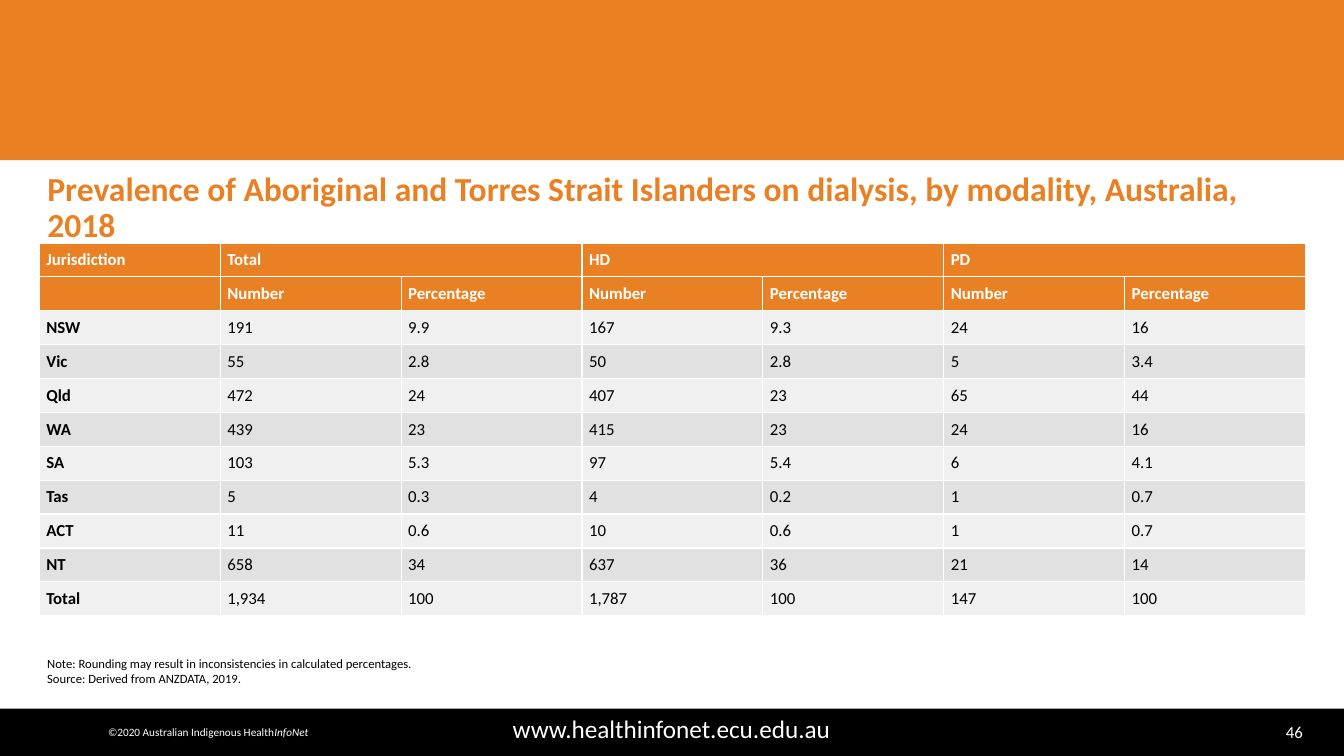
from pptx import Presentation
from pptx.dml.color import RGBColor
from pptx.enum import shapes, text
from pptx.util import Inches, Pt

# Content
TITLE = ("Prevalence of Aboriginal and Torres Strait Islanders on dialysis, "
         "by modality, Australia, 2018")
MODALITIES = ["Total", "HD", "PD"]
MEASURES = ["Number", "Percentage"]
JURISDICTIONS = [
    ("NSW", "191", "9.9", "167", "9.3", "24", "16"),
    ("Vic", "55", "2.8", "50", "2.8", "5", "3.4"),
    ("Qld", "472", "24", "407", "23", "65", "44"),
    ("WA", "439", "23", "415", "23", "24", "16"),
    ("SA", "103", "5.3", "97", "5.4", "6", "4.1"),
    ("Tas", "5", "0.3", "4", "0.2", "1", "0.7"),
    ("ACT", "11", "0.6", "10", "0.6", "1", "0.7"),
    ("NT", "658", "34", "637", "36", "21", "14"),
    ("Total", "1,934", "100", "1,787", "100", "147", "100"),
]
NOTES = ["Note: Rounding may result in inconsistencies in calculated percentages.",
         "Source: Derived from ANZDATA, 2019."]
COPYRIGHT = [("©2020 Australian Indigenous Health", False), ("InfoNet", True)]
ADDRESS = "www.healthinfonet.ecu.edu.au"
PAGE_NUMBER = "46"

COLORS = {"orange": "EA8024", "black": "000000", "white": "FFFFFF",
          "light": "F0F0F0", "dark": "E1E1E1"}
FONT = "Calibri"
LEFT, CENTER, RIGHT = text.PP_ALIGN.LEFT, text.PP_ALIGN.CENTER, text.PP_ALIGN.RIGHT
MIDDLE = text.MSO_ANCHOR.MIDDLE


def color(name):
    return RGBColor.from_string(COLORS[name])


def add_span(para, words, size, tint, bold=False, italic=False):
    span = para.add_run()
    span.text = words
    font = span.font
    font.name, font.size, font.bold, font.italic = FONT, Pt(size), bold, italic
    font.color.rgb = color(tint)


def add_band(page, top, height, tint):
    band = page.shapes.add_shape(shapes.MSO_SHAPE.RECTANGLE, 0, Inches(top),
                                 Inches(13.33), Inches(height))
    band.shadow.inherit = False
    band.fill.solid()
    band.fill.fore_color.rgb = color(tint)
    band.line.fill.background()


def add_lines(page, place, lines, size, tint, align, wrap=True):
    """Each line is a list of (words, italic) spans."""
    frame = page.shapes.add_textbox(*map(Inches, place)).text_frame
    frame.word_wrap = wrap
    frame.vertical_anchor = MIDDLE
    for index, spans in enumerate(lines):
        para = frame.add_paragraph() if index else frame.paragraphs[0]
        para.alignment = align
        for words, italic in spans:
            add_span(para, words, size, tint, italic=italic)


def add_title(page):
    title = page.shapes.title
    title.left, title.top, title.width, title.height = map(
        Inches, (0.37, 1.65, 12.6, 0.84))
    frame = title.text_frame
    frame.word_wrap = True
    frame.auto_size = text.MSO_AUTO_SIZE.NONE
    frame.vertical_anchor = MIDDLE
    para = frame.paragraphs[0]
    para.alignment = LEFT
    para.line_spacing = 0.9
    add_span(para, TITLE, 24, "orange", bold=True)


def add_dialysis_table(page):
    group_row = ["Jurisdiction"]
    for modality in MODALITIES:
        group_row += [modality, ""]
    rows = [group_row, [""] + MEASURES * len(MODALITIES)] + JURISDICTIONS
    width, height = Inches(12.56), Inches(3.7)
    table = page.shapes.add_table(len(rows), len(group_row), Inches(0.39),
                                  Inches(2.41), width, height).table
    for column in table.columns:
        column.width = width // len(group_row)
    for number, values in enumerate(rows):
        table.rows[number].height = height // len(rows)
        header = number < 2
        fill = "orange" if header else ("light", "dark")[number % 2]
        for position, value in enumerate(values):
            cell = table.cell(number, position)
            cell.fill.solid()
            cell.fill.fore_color.rgb = color(fill)
            cell.vertical_anchor = MIDDLE
            cell.margin_left = cell.margin_right = Inches(0.07)
            cell.margin_top = cell.margin_bottom = 0
            if value:
                para = cell.text_frame.paragraphs[0]
                para.space_after = Pt(5)
                add_span(para, value, 12, "white" if header else "black",
                         bold=header or position == 0)
    # Each modality spans its two measures
    for start in range(1, len(group_row), len(MEASURES)):
        table.cell(0, start).merge(table.cell(0, start + len(MEASURES) - 1))


def main():
    deck = Presentation()
    deck.slide_width, deck.slide_height = Inches(13.33), Inches(7.5)
    page = deck.slides.add_slide(deck.slide_layouts[5])

    # Bands and footer
    add_band(page, 0, 1.59, "orange")
    add_band(page, 7.03, 0.47, "black")
    add_lines(page, (11.95, 7.11, 1.07, 0.3), [[(PAGE_NUMBER, False)]],
              12, "white", RIGHT)
    add_lines(page, (0.62, 7.03, 12.08, 0.39), [[(ADDRESS, False)]],
              18, "white", CENTER)
    add_lines(page, (0.92, 7.14, 2.29, 0.24), [COPYRIGHT],
              8, "white", CENTER, wrap=False)

    # Title, table and notes
    add_title(page)
    add_dialysis_table(page)
    add_lines(page, (0.37, 6.43, 12.56, 0.45), [[(note, False)] for note in NOTES],
              9, "black", LEFT)

    deck.save("out.pptx")


if __name__ == "__main__":
    main()
